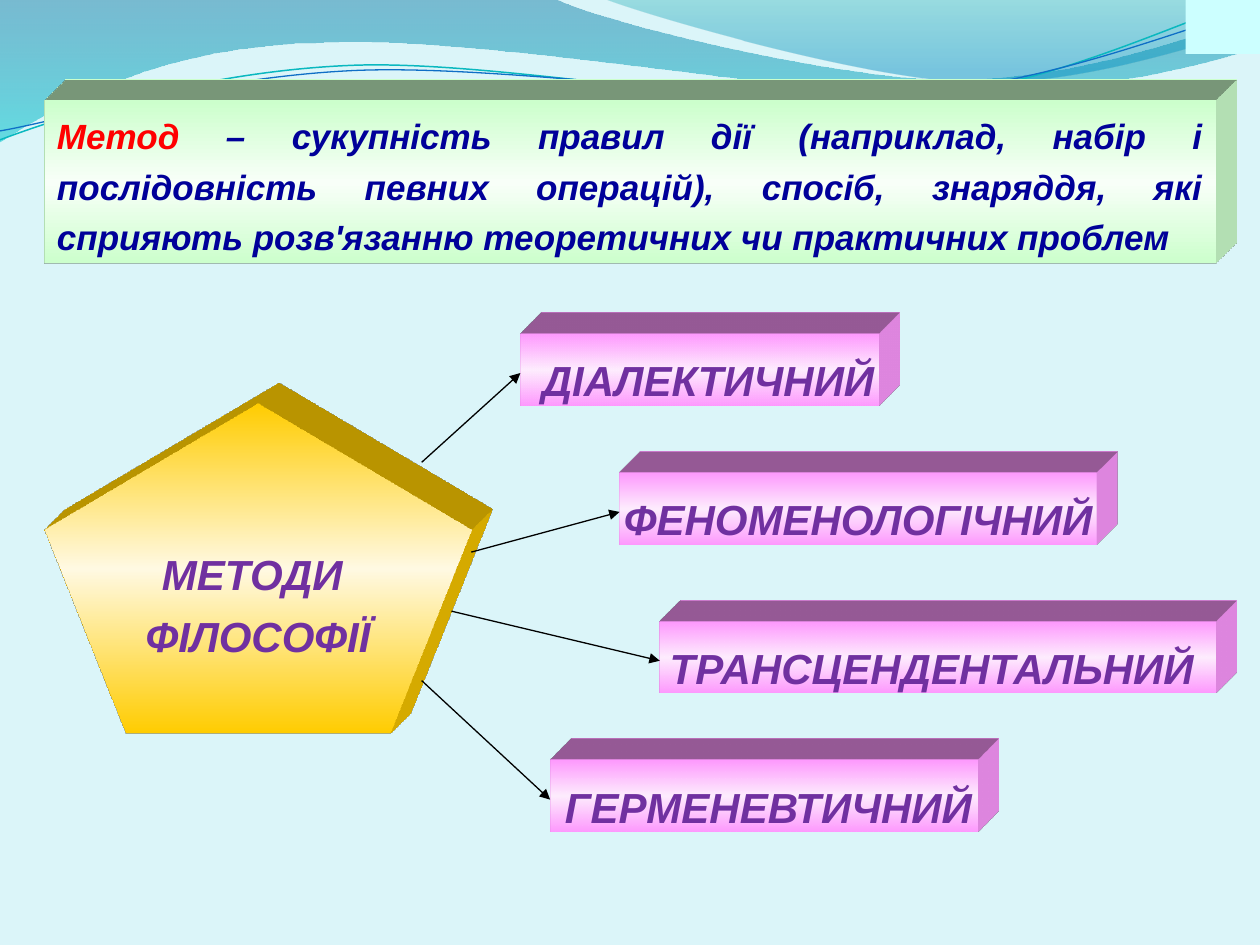
import pptx
import pptx.util
import pptx.dml.color
import pptx.enum.shapes
import pptx.enum.text
import pptx.oxml.ns
from lxml import etree

Cm, Pt = pptx.util.Cm, pptx.util.Pt
qn = pptx.oxml.ns.qn
SHAPE = pptx.enum.shapes.MSO_SHAPE
ALIGN = pptx.enum.text.PP_ALIGN
ANCHOR = pptx.enum.text.MSO_ANCHOR
rgb = pptx.dml.color.RGBColor.from_string


def paint(sp, fill=None, line=None, width=0.75):
    """Fill with a hex colour or with (position, hex, opacity) stops from top to bottom."""
    sp.shadow.inherit = False
    if fill is None:
        sp.fill.background()
    elif isinstance(fill, str):
        sp.fill.solid()
        sp.fill.fore_color.rgb = rgb(fill)
    else:
        sp.fill.gradient()
        grad = sp._element.spPr.find(qn("a:gradFill"))
        for child in list(grad):
            grad.remove(child)
        stops = etree.SubElement(grad, qn("a:gsLst"))
        for pos, colour, opacity in fill:
            gs = etree.SubElement(stops, qn("a:gs"), pos=str(pos * 1000))
            clr = etree.SubElement(gs, qn("a:srgbClr"), val=colour)
            if opacity < 100:
                etree.SubElement(clr, qn("a:alpha"), val=str(opacity * 1000))
        etree.SubElement(grad, qn("a:lin"), ang="5400000", scaled="0")
    if line:
        sp.line.color.rgb = rgb(line)
        sp.line.width = Pt(width)
    else:
        sp.line.fill.background()


def extrude(sp, colour):
    """Give a shape depth towards the top right."""
    spPr = sp._element.spPr
    scene = etree.SubElement(spPr, qn("a:scene3d"))
    etree.SubElement(scene, qn("a:camera"), prst="legacyObliqueTopRight")
    etree.SubElement(scene, qn("a:lightRig"), rig="legacyFlat3", dir="b")
    solid = etree.SubElement(spPr, qn("a:sp3d"), extrusionH="430200", prstMaterial="legacyMatte")
    for bevel in ("a:bevelT", "a:bevelB"):
        etree.SubElement(solid, qn(bevel), w="13500", h="13500", prst="angle")
    clr = etree.SubElement(solid, qn("a:extrusionClr"))
    etree.SubElement(clr, qn("a:srgbClr"), val=colour)


prs = pptx.Presentation()
prs.slide_width, prs.slide_height = Cm(25.4), Cm(19.05)
s = prs.slides.add_slide(prs.slide_layouts[6])
s.background.fill.solid()
s.background.fill.fore_color.rgb = rgb("DBF5F9")

# Waves: start point, then lines (2 numbers) or Bezier curves (6 numbers)
waves = [
    ([(0, -0.03), (11.18, -0.03), (12.09, 0.43, 16.87, 1.6, 19.25, 1.6),
      (21.67, 1.6, 24.33, 0.66, 25.4, 0.23), (25.43, 0.91),
      (24.97, 1.12, 22.1, 1.93, 18.95, 1.91), (15.8, 1.91, 9.7, 0.71, 6.53, 0.86),
      (3.28, 0.89, 1.17, 2.11, -0.03, 2.87)],
     [(0, "0074A1", 45), (100, "00C6CF", 55)], None, 0),
    ([(12.17, -0.03), (12.93, 0.28, 17.32, 1.57, 19.53, 1.65),
      (21.74, 1.75, 24.41, 0.81, 25.4, 0.53), (25.4, 0)],
     [(0, "00A1A9", 30), (80, "008BBF", 45)], None, 0),
    ([(0, 2.82), (1.22, 2.36, 4.01, 1.45, 7.04, 1.32),
      (10.03, 1.19, 15.06, 2.26, 18.11, 2.03), (21.16, 1.8, 23.83, 0.38, 25.35, -0.05)],
     None, "0AB8BF", 0.85),
    ([(0, 2.64), (1.19, 2.44, 4.17, 1.55, 7.19, 1.42),
      (10.24, 1.3, 15.16, 2.11, 18.21, 1.91), (21.23, 1.7, 23.9, 0.53, 25.4, 0.15)],
     None, "0F6FC6", 0.75),
]
for segments, fill, line, width in waves:
    points = [(Cm(seg[i]), Cm(seg[i + 1])) for seg in segments for i in range(0, len(seg), 2)]
    builder = s.shapes.build_freeform(*points[0])
    builder.add_line_segments(points[1:], close=fill is not None)
    wave = builder.convert_to_shape()
    # Join each group of three points into one Bezier curve
    steps = iter(list(wave._element.iter(qn("a:lnTo"))))
    for seg in segments[1:]:
        first = next(steps)
        if len(seg) == 6:
            first.tag = qn("a:cubicBezTo")
            for _ in range(2):
                step = next(steps)
                first.append(step[0])
                step.getparent().remove(step)
    paint(wave, fill, line, width)

PURPLE = "7030A0"
blocks = [
    dict(kind=SHAPE.RECTANGLE, box=(0.9, 2.02, 23.6, 3.3), shades=("CCFFCC", "F8FFF8"),
         insets=(0.25, 0.13, 0.25, 0.13), anchor=ANCHOR.MIDDLE,
         align=ALIGN.JUSTIFY, spacing=1.2, after=0, size=20,
         text=[[("Метод ", "FF0000"),
                ("– сукупність правил дії (наприклад, набір і послідовність певних операцій), "
                 "спосіб, знаряддя, які сприяють розв'язанню теоретичних чи практичних проблем",
                 "000099")]]),
]
# name, left, top, width, left inset, arrow start
methods = [
    ("ДІАЛЕКТИЧНИЙ", 10.49, 6.72, 7.22, 0.35, (8.5, 9.32)),
    ("ФЕНОМЕНОЛОГІЧНИЙ", 12.49, 9.52, 9.62, 0, (9.5, 11.13)),
    ("ТРАНСЦЕНДЕНТАЛЬНИЙ ", 13.3, 12.52, 11.2, 0, (9.1, 12.32)),
    ("ГЕРМЕНЕВТИЧНИЙ", 11.09, 15.32, 8.62, 0.18, (8.5, 13.72)),
]
for name, x, y, w, inset, start in methods:
    blocks.append(dict(
        kind=SHAPE.RECTANGLE, box=(x, y, w, 1.45), shades=("FF99FF", "FFECFF"),
        insets=(inset, 0.13, 0, 0.13), anchor=ANCHOR.TOP,
        align=ALIGN.CENTER, spacing=1.3, after=0, size=24, text=[[(name, PURPLE)]]))
blocks.append(dict(
    kind=SHAPE.REGULAR_PENTAGON, box=(0.9, 8.13, 8.61, 6.65), shades=("FFCC00", "FFF9E2"),
    insets=(0.25, 1.35, 0.25, 0.13), anchor=ANCHOR.TOP,
    align=ALIGN.CENTER, spacing=1, after=6.8, size=24,
    text=[[("МЕТОДИ ", PURPLE)], [("ФІЛОСОФІЇ", PURPLE)]]))

for block in blocks:
    sp = s.shapes.add_shape(block["kind"], *map(Cm, block["box"]))
    outer, middle = block["shades"]
    paint(sp, [(0, outer, 100), (50, middle, 100), (100, outer, 100)])
    extrude(sp, outer)
    tf = sp.text_frame
    tf.word_wrap = True
    tf.vertical_anchor = block["anchor"]
    tf.margin_left, tf.margin_top, tf.margin_right, tf.margin_bottom = map(Cm, block["insets"])
    for i, runs in enumerate(block["text"]):
        p = tf.add_paragraph() if i else tf.paragraphs[0]
        p.alignment = block["align"]
        p.line_spacing = block["spacing"]
        p.space_after = Pt(block["after"])
        for text, colour in runs:
            r = p.add_run()
            r.text = text
            r.font.name = "Arial"
            r.font.size = Pt(block["size"])
            r.font.bold = r.font.italic = True
            r.font.color.rgb = rgb(colour)

for name, x, y, w, inset, start in methods:
    arrow = s.shapes.add_connector(pptx.enum.shapes.MSO_CONNECTOR.STRAIGHT,
                                   Cm(start[0]), Cm(start[1]), Cm(x), Cm(y + 0.8))
    arrow.line.color.rgb = rgb("000000")
    arrow.line.width = Pt(0.75)
    etree.SubElement(arrow.line._get_or_add_ln(), qn("a:tailEnd"), type="triangle")
    etree.SubElement(arrow._element.spPr, qn("a:effectLst"))

corner = s.shapes.add_shape(SHAPE.RECTANGLE, Cm(23.9), Cm(0), Cm(1.5), Cm(1.09))
paint(corner, "CCFFFF")

prs.save("out.pptx")
